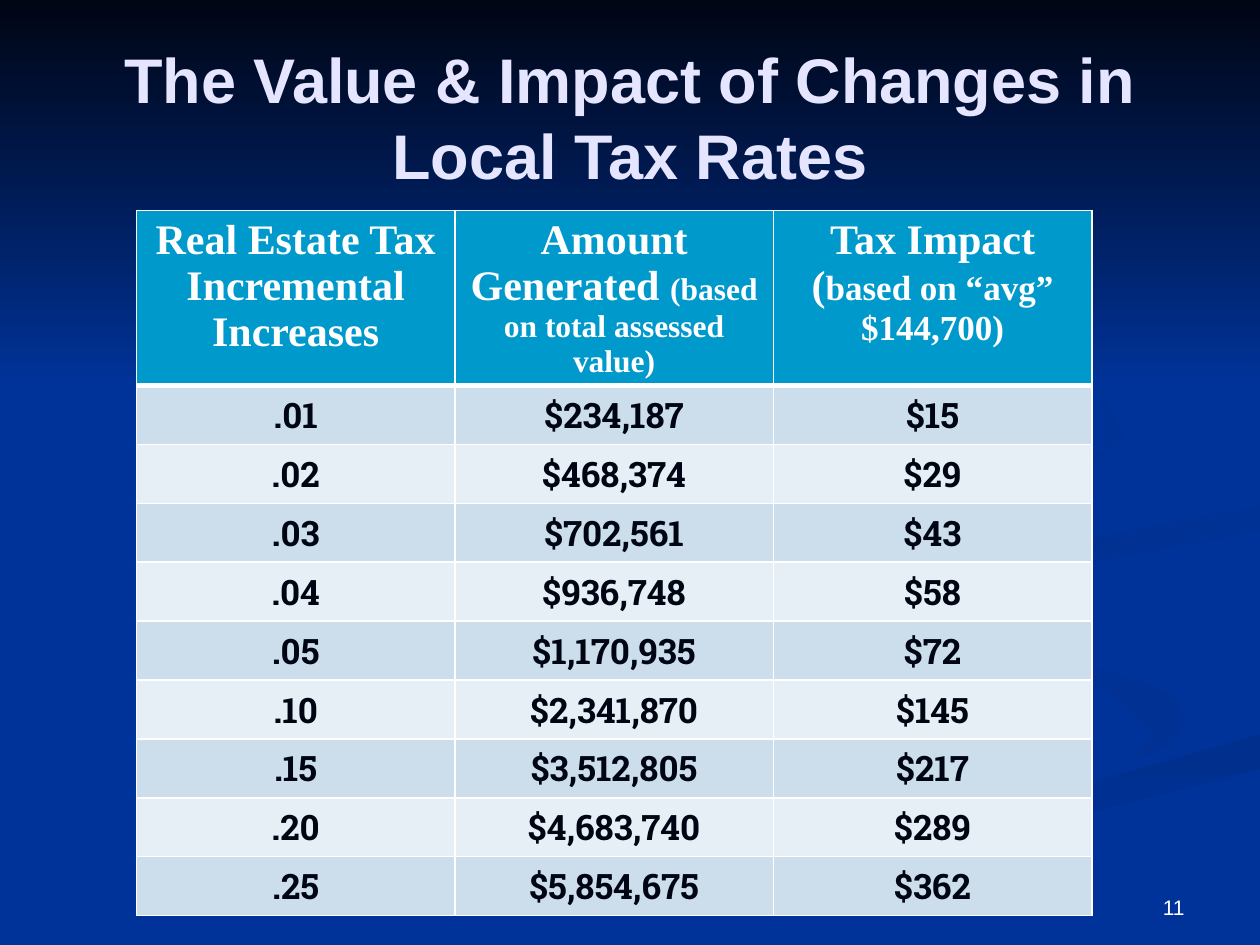
from lxml import etree
from pptx import Presentation
from pptx import util as u
from pptx.dml.color import RGBColor
from pptx.enum import shapes, text
from pptx.oxml.ns import qn

TITLE = "The Value & Impact of Changes in Local Tax Rates"
PAGE_NUMBER = "11"

HEADERS = [
    [[("Real Estate Tax", 24)], [("Incremental Increases", 24)]],
    [[("Amount Generated ", 24), ("(based on total assessed value)", 18)]],
    [[("Tax Impact (", 24), ("based on “avg” $144,700)", 20)]],
]
RATES = [
    (".01", "$234,187", "$15"),
    (".02", "$468,374", "$29"),
    (".03", "$702,561", "$43"),
    (".04", "$936,748", "$58"),
    (".05", "$1,170,935", "$72"),
    (".10", "$2,341,870", "$145"),
    (".15", "$3,512,805", "$217"),
    (".20", "$4,683,740", "$289"),
    (".25", "$5,854,675", "$362"),
]

THEME = {
    "background": "003399", "night": "000514", "title": "E5E5FF", "white": "FFFFFF",
    "header": "0099CC", "bands": ("CCDEEC", "E7EFF6"), "swirl": "002F8E", "curl": "003193",
    "sans": "Arial", "serif": "Times New Roman", "slab": "Roboto Slab",
    "title_size": 36, "body_size": 20, "number_size": 12,
}
BLUE, SWIRL = THEME["background"], THEME["swirl"]

RIBBONS = [
    ((BLUE, THEME["curl"]), 45, [
        (18.4, 11.8), (20.1, 12.9), (22.6, 13.6), (23.6, 14), (23.9, 14.5), (23.6, 15),
        (22.7, 15.4), (23.3, 14.8), (22.4, 14), (19.5, 13)]),
    ((SWIRL, BLUE), 90, [
        (12.8, 19), (14.5, 19), (18.3, 17.3), (25.4, 15.5), (25.4, 14.8), (17.7, 17)]),
    ((SWIRL, BLUE), 45, [
        (19.8, 11.7), (21, 12.6), (21, 11.5), (25.4, 10.7), (25.4, 10.2), (20.3, 11.2)]),
    ((SWIRL, BLUE), 45, [
        (17.3, 10.9), (21.4, 10), (22.7, 8.8), (21.7, 7.2), (19.4, 5.9), (22.2, 7.8),
        (22.3, 9.1), (16.5, 10.6), (14.7, 11.7), (15.8, 12.7), (15.1, 11.8)]),
]


def color(value):
    return RGBColor.from_string(value)


def style(span, size, font, ink, bold=True):
    span.font.size, span.font.name, span.font.bold = u.Pt(size), font, bold
    span.font.color.rgb = color(ink)


def shade(shape, colors, angle):
    shape.shadow.inherit = False
    shape.line.fill.background()
    shape.fill.gradient()
    shape.fill.gradient_angle = -angle % 360
    for position, (stop, value) in enumerate(zip(shape.fill.gradient_stops, colors)):
        stop.color.rgb = color(value)
        stop.position = position


def draw_ribbon(page, colors, angle, points):
    corners = [(u.Cm(x), u.Cm(y)) for x, y in points]
    builder = page.shapes.build_freeform(*corners[0])
    builder.add_line_segments(corners[1:], close=True)
    shade(builder.convert_to_shape(), colors, angle)


def set_borders(cell, top, bottom):
    properties = cell._tc.get_or_add_tcPr()
    widths = (("a:lnL", 1), ("a:lnR", 1), ("a:lnT", top), ("a:lnB", bottom))
    for index, (side, width) in enumerate(widths):
        line = etree.Element(qn(side), w=str(u.Pt(width)))
        fill = etree.SubElement(line, qn("a:solidFill"))
        etree.SubElement(fill, qn("a:srgbClr"), val=THEME["white"])
        properties.insert(index, line)


def fill_cell(cell, paragraphs, fill, font, ink):
    cell.fill.solid()
    cell.fill.fore_color.rgb = color(fill)
    frame = cell.text_frame
    for index, spans in enumerate(paragraphs):
        para = frame.add_paragraph() if index else frame.paragraphs[0]
        para.alignment = text.PP_ALIGN.CENTER
        for words, size in spans:
            span = para.add_run()
            span.text = words
            style(span, size, font, ink)


def add_rates(page):
    header_height, row_height, column_width = 3.53, 1.18, 6.42
    rows, columns = len(RATES) + 1, len(HEADERS)
    frame = page.shapes.add_table(
        rows, columns, u.Cm(2.75), u.Cm(4.24), u.Cm(column_width * columns),
        u.Cm(header_height + row_height * len(RATES)))
    table = frame.table
    for column in table.columns:
        column.width = u.Cm(column_width)
    for index, row in enumerate(table.rows):
        row.height = u.Cm(row_height if index else header_height)
        for place, cell in enumerate(row.cells):
            if index:
                paragraphs = [[(RATES[index - 1][place], THEME["body_size"])]]
                band = THEME["bands"][(index - 1) % 2]
                fill_cell(cell, paragraphs, band, THEME["slab"], THEME["night"])
            else:
                fill_cell(cell, HEADERS[place], THEME["header"], THEME["serif"], THEME["white"])
            set_borders(cell, 3 if index == 1 else 1, 1 if index else 3)


def set_box(box, words, place, anchor, alignment, size, ink, bold):
    box.left, box.top, box.width, box.height = map(u.Cm, place)
    frame = box.text_frame
    frame.text = words
    frame.word_wrap = True
    frame.auto_size = text.MSO_AUTO_SIZE.NONE
    frame.vertical_anchor = anchor
    para = frame.paragraphs[0]
    para.alignment = alignment
    style(para.runs[0], size, THEME["sans"], ink, bold)


def main():
    deck = Presentation()
    deck.slide_width, deck.slide_height = u.Cm(25.4), u.Cm(19.05)
    page = deck.slides.add_slide(deck.slide_layouts[5])
    page.background.fill.solid()
    page.background.fill.fore_color.rgb = color(BLUE)
    for ribbon in RIBBONS:
        draw_ribbon(page, *ribbon)
    sky = page.shapes.add_shape(
        shapes.MSO_SHAPE.RECTANGLE, 0, 0, deck.slide_width, u.Cm(7.82))
    shade(sky, (THEME["night"], BLUE), 90)
    number = page.shapes.add_textbox(0, 0, 0, 0)
    set_box(number, PAGE_NUMBER, (18.21, 17.35, 5.92, 1.32), text.MSO_ANCHOR.BOTTOM,
            text.PP_ALIGN.RIGHT, THEME["number_size"], THEME["white"], False)
    title = page.shapes.title
    set_box(title, TITLE, (1.27, 0.76, 22.86, 3.18), text.MSO_ANCHOR.MIDDLE,
            text.PP_ALIGN.CENTER, THEME["title_size"], THEME["title"], True)
    title.element.getparent().append(title.element)
    add_rates(page)
    deck.save("out.pptx")


if __name__ == "__main__":
    main()
